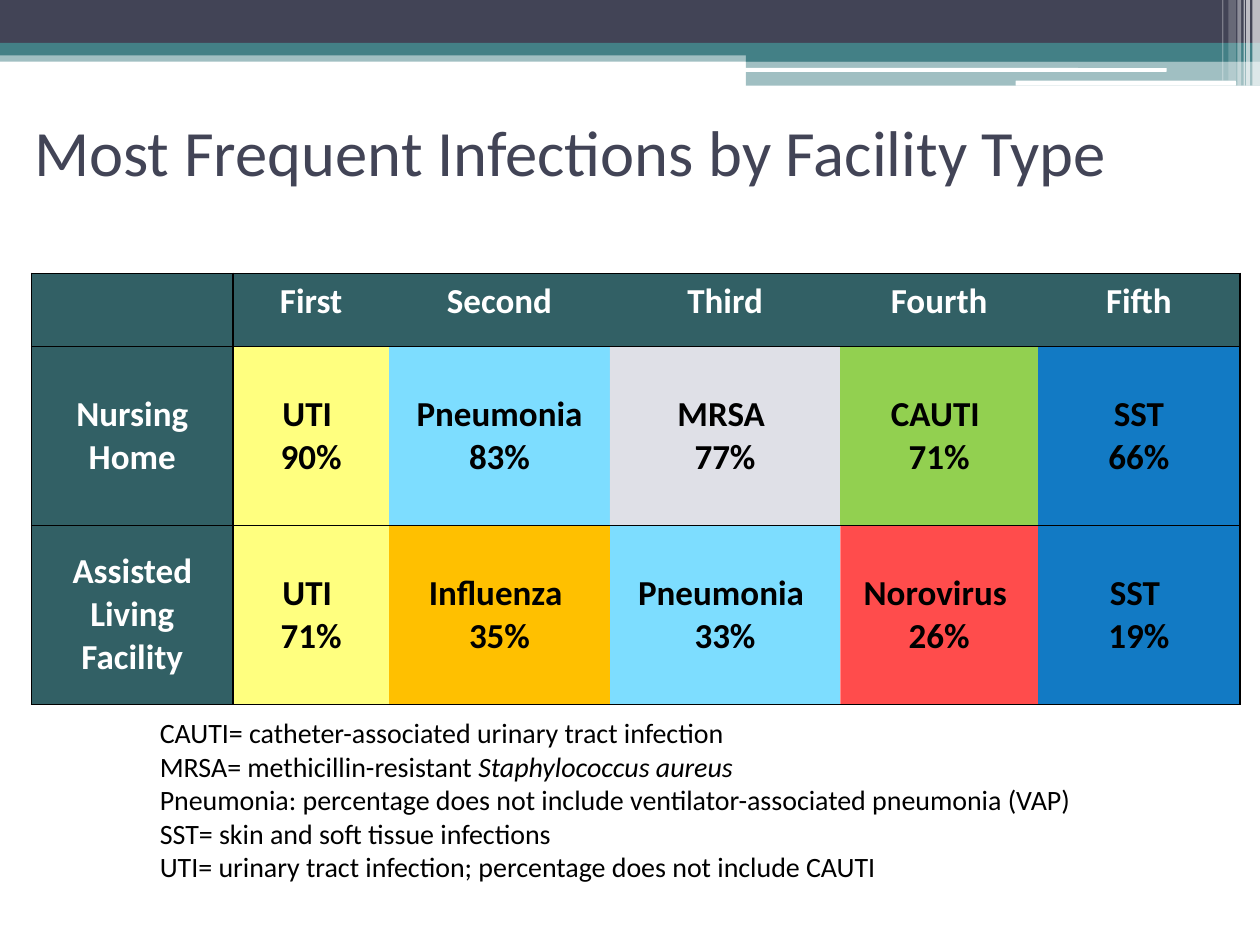
from dataclasses import dataclass

from lxml.etree import SubElement
from pptx import Presentation
from pptx.dml.color import RGBColor
from pptx.dml.fill import FillFormat
from pptx.enum.shapes import MSO_SHAPE as Shape
from pptx.enum.text import MSO_ANCHOR as Anchor, PP_ALIGN as Align
from pptx.oxml import parse_xml
from pptx.oxml.ns import nsdecls, qn
from pptx.util import Inches, Pt


@dataclass(frozen=True)
class Paint:
    color: str
    opacity: int = 100  # percent


@dataclass(frozen=True)
class Theme:
    font: str = "Calibri"
    title_size: float = 36.9
    table_size: float = 20
    note_size: float = 16
    navy: str = "424456"
    teal: str = "438086"
    white: str = "FFFFFF"
    black: str = "000000"
    heading: Paint = Paint("326065")


THEME = Theme()


@dataclass(frozen=True)
class Band:
    left: float
    top: float
    width: float
    height: float
    paint: Paint
    preset: Shape = Shape.RECTANGLE


@dataclass(frozen=True)
class Infection:
    name: str
    percent: int
    paint: Paint


@dataclass(frozen=True)
class Facility:
    name: str
    infections: tuple


WHITE = Paint(THEME.white)
TEAL = Paint(THEME.teal)
PALE_TEAL = Paint(THEME.teal, 50)
BANDS = [
    Band(0, 0.4, 10, 0.09, PALE_TEAL),
    Band(0, 0, 10, 0.34, Paint(THEME.navy)),
    Band(0, 0.34, 10, 0.1, TEAL),
    Band(5.92, 0.39, 4.08, 0.1, TEAL),
    Band(5.92, 0.48, 4.08, 0.2, PALE_TEAL),
    Band(5.91, 0.54, 3.35, 0.03, WHITE, Shape.ROUNDED_RECTANGLE),
    Band(8.06, 0.64, 1.75, 0.04, WHITE, Shape.ROUNDED_RECTANGLE),
]
# Translucent stripes at the right edge: left, width, height, opacity
STRIPES = [
    (9.94, 0.06, 0.68, 65),
    (9.89, 0.03, 0.68, 65),
    (9.87, 0.01, 0.68, 60),
    (9.82, 0.03, 0.68, 40),
    (9.75, 0.06, 0.64, 20),
    (9.7, 0.01, 0.64, 30),
]

YELLOW = Paint("FFFF00", 50)
SKY = Paint("7DDDFF")
BLUE = Paint("0070C0", 93)
RANKS = ["First", "Second", "Third", "Fourth", "Fifth"]
FACILITIES = [
    Facility("Nursing Home", (
        Infection("UTI ", 90, YELLOW),
        Infection("Pneumonia", 83, SKY),
        Infection("MRSA ", 77, Paint("D6D7E0", 76)),
        Infection("CAUTI ", 71, Paint("92D050")),
        Infection("SST", 66, BLUE),
    )),
    Facility("Assisted Living Facility", (
        Infection("UTI ", 71, YELLOW),
        Infection("Influenza ", 35, Paint("FFC000")),
        Infection("Pneumonia ", 33, SKY),
        Infection("Norovirus ", 26, Paint("FF0000", 70)),
        Infection("SST ", 19, BLUE),
    )),
]
COLUMN_WIDTHS = [1.6, 1.24, 1.75, 1.83, 1.57, 1.6]
ROW_HEIGHTS = [0.58, 1.42, 1.42]

# Each note is a plain part and an italic part
NOTES = [
    ("CAUTI= catheter-associated urinary tract infection", ""),
    ("MRSA= methicillin-resistant ", "Staphylococcus aureus"),
    ("Pneumonia: percentage does not include ventilator-associated pneumonia (VAP)", ""),
    ("SST= skin and soft tissue infections", ""),
    ("UTI= urinary tract infection; percentage does not include CAUTI", ""),
]


def apply_paint(fill: FillFormat, properties, paint: Paint) -> None:
    """Fill with a colour; properties is the XML element that holds the fill."""
    fill.solid()
    fill.fore_color.rgb = RGBColor.from_string(paint.color)
    if paint.opacity < 100:
        color = next(properties.iter(qn("a:srgbClr")))
        SubElement(color, qn("a:alpha"), val=str(paint.opacity * 1000))


def style_font(font, size: float, color: str, bold: bool = False) -> None:
    font.name = THEME.font
    font.size = Pt(size)
    font.bold = bold
    font.color.rgb = RGBColor.from_string(color)


def draw_band(slide, band: Band) -> None:
    shape = slide.shapes.add_shape(
        band.preset, Inches(band.left), Inches(band.top), Inches(band.width), Inches(band.height))
    shape.shadow.inherit = False
    apply_paint(shape.fill, shape._element.spPr, band.paint)
    shape.line.fill.background()


def set_borders(cell, visible: str) -> None:
    """Draw the sides named in visible (L, R, T, B) and clear the others."""
    properties = cell._tc.get_or_add_tcPr()
    for index, side in enumerate("LRTB"):
        line = (f'<a:solidFill><a:srgbClr val="{THEME.black}"/></a:solidFill>'
                if side in visible else "<a:noFill/>")
        properties.insert(index, parse_xml(
            f'<a:ln{side} {nsdecls("a")} w="{Pt(1)}">{line}</a:ln{side}>'))


def fill_cell(cell, text: str, paint: Paint, color: str, anchor: Anchor, borders: str) -> None:
    apply_paint(cell.fill, cell._tc.get_or_add_tcPr(), paint)
    set_borders(cell, borders)
    cell.vertical_anchor = anchor
    cell.text_frame.text = text
    for paragraph in cell.text_frame.paragraphs:
        paragraph.alignment = Align.CENTER
        style_font(paragraph.font, THEME.table_size, color, bold=True)
        for run in paragraph.runs:
            style_font(run.font, THEME.table_size, color, bold=True)


def draw_title(slide, text: str) -> None:
    title = slide.shapes.title
    title.left, title.top, title.width, title.height = map(Inches, (0.17, 0.33, 9.42, 1.17))
    frame = title.text_frame
    frame.text = text
    frame.vertical_anchor = Anchor.BOTTOM
    frame.margin_bottom = 0
    frame.paragraphs[0].alignment = Align.LEFT
    style_font(frame.paragraphs[0].runs[0].font, THEME.title_size, THEME.navy)


def draw_table(slide) -> None:
    table = slide.shapes.add_table(
        len(ROW_HEIGHTS), len(COLUMN_WIDTHS), Inches(0.25), Inches(2.17),
        Inches(sum(COLUMN_WIDTHS)), Inches(sum(ROW_HEIGHTS))).table
    for column, width in zip(table.columns, COLUMN_WIDTHS):
        column.width = Inches(width)
    for row, height in zip(table.rows, ROW_HEIGHTS):
        row.height = Inches(height)

    # Vertical lines only around the first column and at the right edge
    borders = ["LRTB", "LTB"] + ["TB"] * (len(RANKS) - 2) + ["RTB"]
    for column, rank in enumerate(["", *RANKS]):
        fill_cell(table.cell(0, column), rank, THEME.heading, THEME.white,
                  Anchor.TOP, borders[column])
    for row, facility in enumerate(FACILITIES, start=1):
        fill_cell(table.cell(row, 0), facility.name, THEME.heading, THEME.white,
                  Anchor.MIDDLE, borders[0])
        for column, infection in enumerate(facility.infections, start=1):
            fill_cell(table.cell(row, column), f"{infection.name}\n{infection.percent}%",
                      infection.paint, THEME.black, Anchor.MIDDLE, borders[column])


def draw_notes(slide) -> None:
    frame = slide.shapes.add_textbox(*map(Inches, (1.17, 5.63, 8.42, 1.45))).text_frame
    frame.word_wrap = True
    frame.text = "\n".join(plain for plain, _ in NOTES)
    for paragraph, (_, italic) in zip(frame.paragraphs, NOTES):
        if italic:
            species = paragraph.add_run()
            species.text = italic
            species.font.italic = True
        for run in paragraph.runs:
            style_font(run.font, THEME.note_size, THEME.black)


def main() -> None:
    deck = Presentation()
    deck.slide_width, deck.slide_height = Inches(10), Inches(7.5)
    slide = deck.slides.add_slide(deck.slide_layouts[5])  # title only

    # Header decoration
    stripes = [Band(left, 0, width, height, Paint(THEME.white, opacity))
               for left, width, height, opacity in STRIPES]
    for band in BANDS + stripes:
        draw_band(slide, band)

    # Content
    draw_title(slide, "Most Frequent Infections by Facility Type")
    draw_table(slide)
    draw_notes(slide)
    deck.save("out.pptx")


if __name__ == "__main__":
    main()
